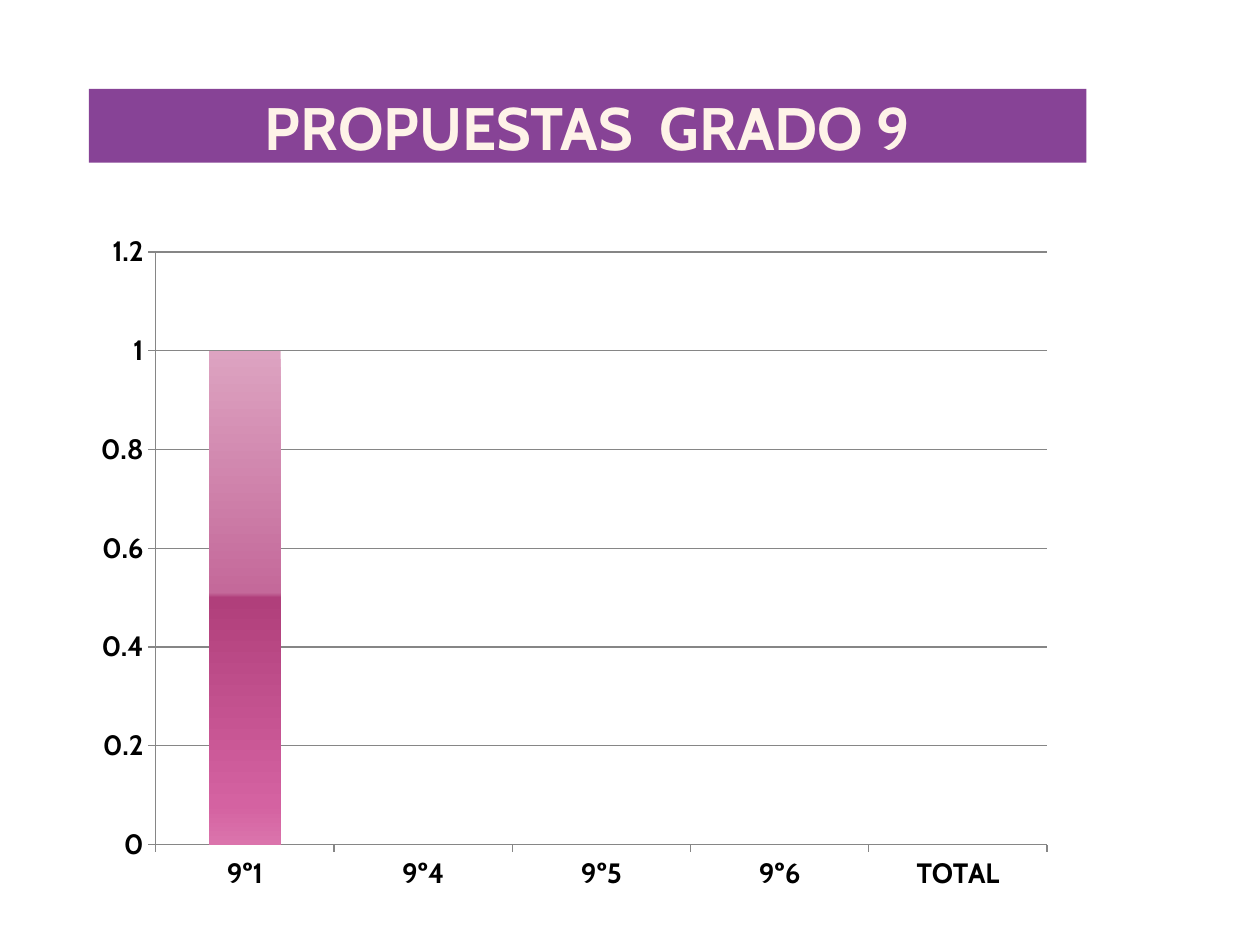
from dataclasses import dataclass

from lxml import etree
from pptx import Presentation
from pptx import util as u
from pptx.chart.data import CategoryChartData
from pptx.dml.color import RGBColor
from pptx.enum import chart as ch, text
from pptx.oxml import parse_xml
from pptx.oxml.ns import nsdecls, qn


@dataclass(frozen=True)
class Theme:
    font: str = "Cabin"
    banner: str = "874396"
    heading: str = "FEF3E8"
    ink: str = "000000"
    grid: str = "868686"
    paper: str = "FFFFFF"
    heading_size: float = 34.2
    chart_size: float = 10
    axis_size: float = 16


@dataclass(frozen=True)
class Box:
    left: float
    top: float
    width: float
    height: float

    def lengths(self) -> tuple:
        return tuple(u.Cm(v) for v in (self.left, self.top, self.width, self.height))


@dataclass(frozen=True)
class Stop:
    percent: int
    color: str


THEME = Theme()
BANNER_BOX = Box(1.79, 1.79, 20.11, 1.49)
CHART_BOX = Box(1.27, 4.47, 20.12, 13.59)
PLOT_AREA = {"x": 0.093, "y": 0.045, "w": 0.893, "h": 0.879}
GROUPS = ("9º1", "9º4", "9º5", "9º6", "TOTAL")
PROPOSALS = (1, 0, 0, 0, 0)
BAR_STOPS = (Stop(0, "DDA3C1"), Stop(49, "C4699A"), Stop(50, "B03F7B"),
             Stop(92, "D462A1"), Stop(100, "DB74AC"))


def rgb(color: str) -> RGBColor:
    return RGBColor.from_string(color)


def format_font(font, size: float, color: str, bold: bool) -> None:
    font.name = THEME.font
    font.size = u.Pt(size)
    font.bold = bold
    font.color.rgb = rgb(color)


def draw_banner(banner, wording: str) -> None:
    banner.left, banner.top, banner.width, banner.height = BANNER_BOX.lengths()
    banner.fill.solid()
    banner.fill.fore_color.rgb = rgb(THEME.banner)
    frame = banner.text_frame
    frame.auto_size = text.MSO_AUTO_SIZE.NONE
    frame.word_wrap = True
    frame.vertical_anchor = text.MSO_ANCHOR.BOTTOM
    frame.margin_left = frame.margin_right = u.Cm(0.13)
    frame.margin_top = frame.margin_bottom = 0
    heading = frame.paragraphs[0]
    heading.alignment = text.PP_ALIGN.CENTER
    run = heading.add_run()
    run.text = wording
    format_font(run.font, THEME.heading_size, THEME.heading, True)


def format_axis(axis) -> None:
    axis.major_tick_mark = ch.XL_TICK_MARK.OUTSIDE
    axis.minor_tick_mark = ch.XL_TICK_MARK.NONE
    axis.format.line.color.rgb = rgb(THEME.grid)
    axis.format.line.width = u.Pt(0.75)
    format_font(axis.tick_labels.font, THEME.axis_size, THEME.ink, True)


def fill_with_stops(series, stops: tuple[Stop, ...]) -> None:
    """Fill the bars with a vertical gradient of any number of stops."""
    series.format.fill.gradient()
    series.format.fill.gradient_angle = 270
    stop_list = series.format.fill._fill._gradFill.find(qn("a:gsLst"))
    for old_stop in list(stop_list):
        stop_list.remove(old_stop)
    for stop in stops:
        entry = etree.SubElement(stop_list, qn("a:gs"), pos=str(stop.percent * 1000))
        etree.SubElement(entry, qn("a:srgbClr"), val=stop.color)


def place_plot(chart) -> None:
    """Fix the inner plot area as fractions of the chart."""
    plot_area = chart._chartSpace.chart.plotArea
    for old_layout in plot_area.findall(qn("c:layout")):
        plot_area.remove(old_layout)
    sizes = "".join(f'<c:{key} val="{value}"/>' for key, value in PLOT_AREA.items())
    plot_area.insert(0, parse_xml(
        f'<c:layout {nsdecls("c")}><c:manualLayout><c:layoutTarget val="inner"/>'
        f'<c:xMode val="edge"/><c:yMode val="edge"/>{sizes}'
        '</c:manualLayout></c:layout>'))


def paint_background(chart) -> None:
    chart_space = chart._chartSpace
    chart_space.chart.addnext(parse_xml(
        f'<c:spPr {nsdecls("c", "a")}><a:solidFill><a:srgbClr val="{THEME.paper}"/>'
        '</a:solidFill><a:ln><a:noFill/></a:ln></c:spPr>'))


def draw_chart(slide) -> None:
    data = CategoryChartData()
    data.categories = GROUPS
    data.add_series("Series 1", PROPOSALS)
    chart = slide.shapes.add_chart(
        ch.XL_CHART_TYPE.COLUMN_STACKED, *CHART_BOX.lengths(), data).chart
    chart.has_title = False
    chart.has_legend = False
    format_font(chart.font, THEME.chart_size, THEME.ink, False)

    # Bars
    bars = chart.plots[0]
    bars.gap_width = 150
    bars.overlap = 100
    bars.vary_by_categories = False
    fill_with_stops(bars.series[0], BAR_STOPS)

    # Axes and gridlines
    for axis in (chart.category_axis, chart.value_axis):
        format_axis(axis)
    scale = chart.value_axis
    scale.minimum_scale, scale.maximum_scale, scale.major_unit = 0, 1.2, 0.2
    scale.tick_labels.number_format = "General"
    scale.tick_labels.number_format_is_linked = False
    scale.has_major_gridlines = True
    scale.major_gridlines.format.line.color.rgb = rgb(THEME.grid)
    scale.major_gridlines.format.line.width = u.Pt(0.75)

    place_plot(chart)
    paint_background(chart)


def main() -> None:
    deck = Presentation()
    deck.slide_width, deck.slide_height = u.Cm(25.4), u.Cm(19.05)
    slide = deck.slides.add_slide(deck.slide_layouts[5])
    draw_banner(slide.shapes.title, "PROPUESTAS  GRADO 9")
    draw_chart(slide)
    deck.save("out.pptx")


if __name__ == "__main__":
    main()
